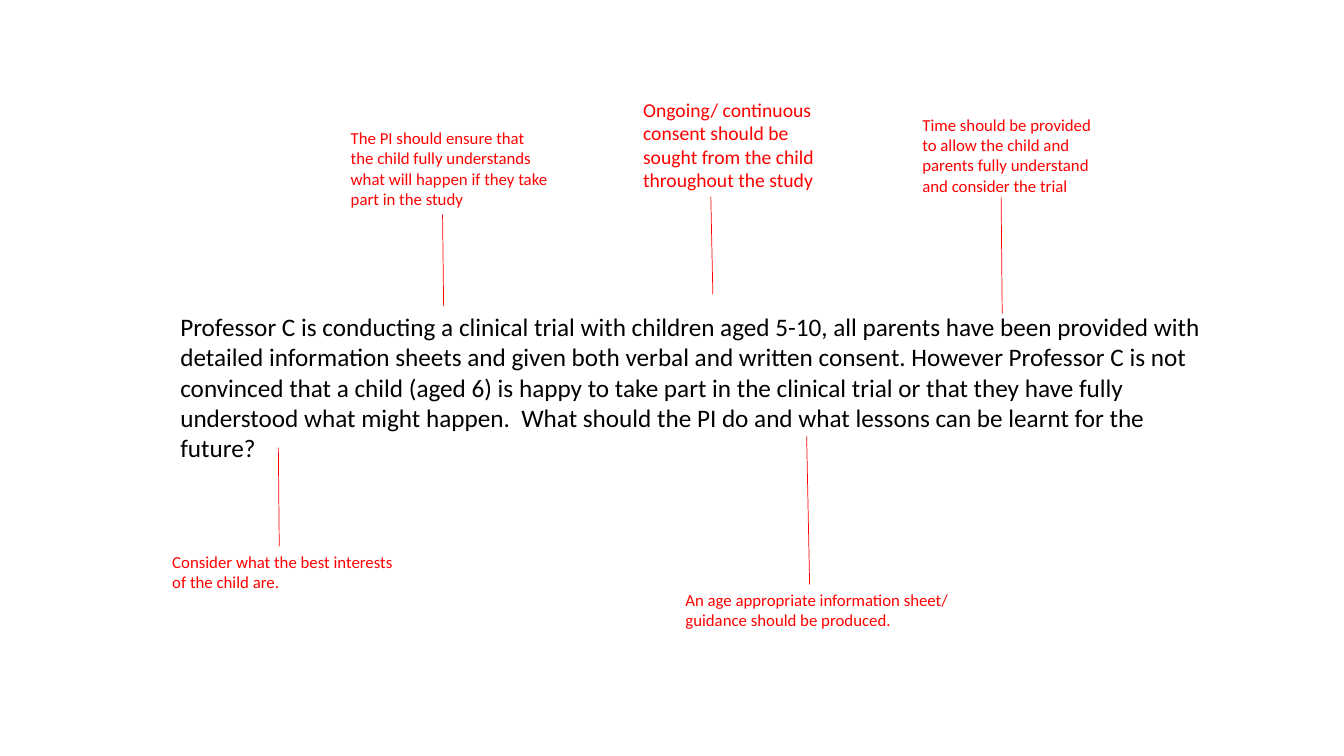
"""Builds a case-study slide with red notes linked to the text."""
from dataclasses import dataclass

from lxml.etree import SubElement
from pptx import Presentation
from pptx.dml.color import RGBColor as Color
from pptx.enum.shapes import MSO_CONNECTOR as Link
from pptx.enum.text import MSO_AUTO_SIZE as Fit
from pptx.oxml.ns import qn
from pptx.util import Inches, Pt


@dataclass(frozen=True)
class Theme:
    font: str = "Calibri"
    ink: str = "000000"
    note: str = "FF0000"
    case: int = 18
    large: int = 14
    small: int = 12
    line: float = 0.5


look = Theme()
deck = Presentation()
deck.slide_width, deck.slide_height = Inches(13.33), Inches(7.5)
slide = deck.slides.add_slide(deck.slide_layouts[6])


def scale(*shares):
    """Turn percent shares, across and down in turn, into lengths."""
    sides = deck.slide_width, deck.slide_height
    return [round(sides[i % 2] * share / 100) for i, share in enumerate(shares)]


def write(text, at, size=look.small, color=look.note):
    """Place a wrapped text box."""
    frame = slide.shapes.add_textbox(*scale(*at)).text_frame
    frame.word_wrap = True
    frame.auto_size = Fit.SHAPE_TO_FIT_TEXT
    run = frame.paragraphs[0].add_run()
    run.text = text
    run.font.name = look.font
    run.font.size = Pt(size)
    run.font.color.rgb = Color.from_string(color)


write("Professor C is conducting a clinical trial with children aged 5-10, "
      "all parents have been provided with detailed information sheets and "
      "given both verbal and written consent. However Professor C is not "
      "convinced that a child (aged 6) is happy to take part in the clinical "
      "trial or that they have fully understood what might happen.  What "
      "should the PI do and what lessons can be learnt for the future?",
      (12.68, 40.53, 77.79, 21.6), size=look.case, color=look.ink)

notes = [
    ("The PI should ensure that the child fully understands what will happen "
     "if they take part in the study", look.small,
     (25.36, 16.27, 16.35, 12.13), (33.01, 40.53, 32.93, 28.4)),
    ("Consider what the best interests of the child are.", look.small,
     (12.08, 72.27, 18.6, 6.67), (20.71, 59.2, 20.78, 72.27)),
    ("An age appropriate information sheet/ guidance should be produced.",
     look.small, (50.26, 77.33, 22.66, 6.67), (60.02, 57.73, 60.24, 77.33)),
    ("Time should be provided to allow the child and parents fully understand "
     "and consider the trial", look.small,
     (67.89, 14.53, 14.7, 12.13), (74.57, 41.47, 74.49, 26)),
    ("Ongoing/ continuous consent should be sought from the child throughout "
     "the study", look.large,
     (47.11, 12.27, 15.53, 13.87), (53.04, 38.93, 52.89, 26)),
]

for text, size, box, ends in notes:
    line = slide.shapes.add_connector(Link.STRAIGHT, *scale(*ends))
    line.line.color.rgb = Color.from_string(look.note)
    line.line.width = Pt(look.line)
    SubElement(line._element.spPr, qn("a:effectLst"))
    write(text, box, size=size)

deck.save("out.pptx")
